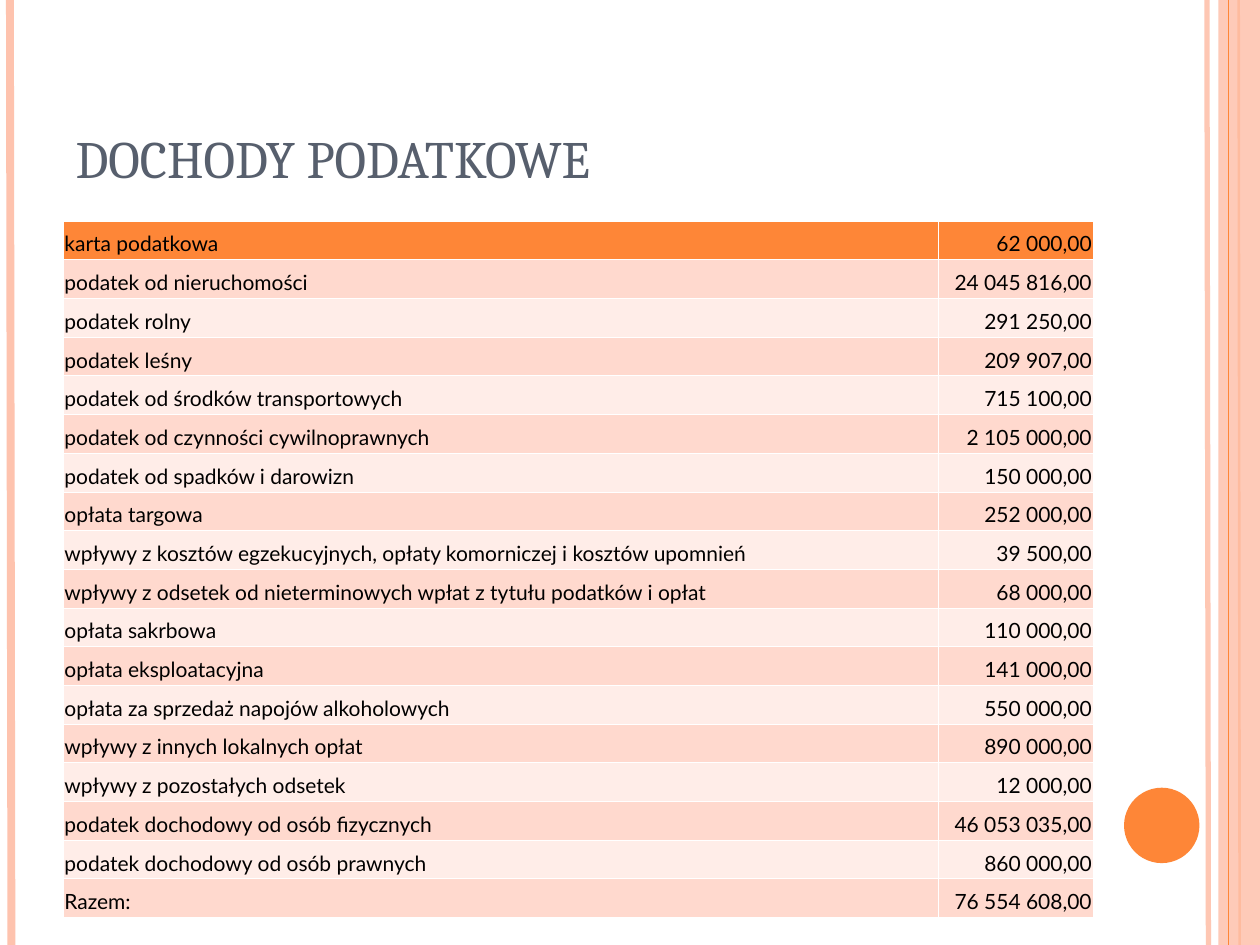
from lxml import etree
from pptx import Presentation
from pptx.dml.color import RGBColor
from pptx.enum import shapes, text
from pptx.oxml import ns
from pptx.util import Cm, Pt

ORANGE = RGBColor(0xFE, 0x86, 0x37)
PEACH = RGBColor(0xFE, 0xC3, 0xAE)
BAND_DARK = RGBColor(0xFF, 0xD9, 0xCE)
BAND_LIGHT = RGBColor(0xFF, 0xED, 0xE8)
SLATE = RGBColor(0x57, 0x5F, 0x6D)
BLACK = RGBColor(0, 0, 0)

SLIDE_WIDTH, SLIDE_HEIGHT = Cm(25.4), Cm(19.05)
COLUMN_WIDTHS = Cm(17.63), Cm(3.12)
ROW_HEIGHT = Cm(0.78)

REVENUES = [
    ("karta podatkowa", "62 000,00"),
    ("podatek od nieruchomości", "24 045 816,00"),
    ("podatek rolny", "291 250,00"),
    ("podatek leśny", "209 907,00"),
    ("podatek od środków transportowych", "715 100,00"),
    ("podatek od czynności cywilnoprawnych", "2 105 000,00"),
    ("podatek od spadków i darowizn", "150 000,00"),
    ("opłata targowa", "252 000,00"),
    ("wpływy z kosztów egzekucyjnych, opłaty komorniczej i kosztów upomnień", "39 500,00"),
    ("wpływy z odsetek od nieterminowych wpłat z tytułu podatków i opłat", "68 000,00"),
    ("opłata sakrbowa", "110 000,00"),
    ("opłata eksploatacyjna", "141 000,00"),
    ("opłata za sprzedaż napojów alkoholowych", "550 000,00"),
    ("wpływy z innych lokalnych opłat", "890 000,00"),
    ("wpływy z pozostałych odsetek", "12 000,00"),
    ("podatek dochodowy od osób fizycznych", "46 053 035,00"),
    ("podatek dochodowy od osób prawnych", "860 000,00"),
    ("Razem:", "76 554 608,00"),
]


def set_opacity(element, percent):
    """Set the opacity of the colour inside an element."""
    colour = element.find(".//" + ns.qn("a:srgbClr"))
    etree.SubElement(colour, ns.qn("a:alpha"), val=str(percent * 1000))


def style_text(frame, font_name, size, colour):
    """Format every run of a text frame."""
    for paragraph in frame.paragraphs:
        for run in paragraph.runs:
            run.font.name = font_name
            run.font.size = Pt(size)
            run.font.color.rgb = colour


def add_stripe(slide, top_x, bottom_x, colour, width, opacity=100):
    """Draw a line down the full height of the slide."""
    stripe = slide.shapes.add_connector(
        shapes.MSO_CONNECTOR.STRAIGHT, Cm(top_x), 0, Cm(bottom_x), SLIDE_HEIGHT)
    stripe.line.color.rgb = colour
    stripe.line.width = Pt(width)
    properties = stripe.element.spPr
    etree.SubElement(properties, ns.qn("a:effectLst"))
    if opacity < 100:
        set_opacity(properties, opacity)


def add_plain_shape(slide, preset, left, top, width, height, colour, opacity=100):
    """Add a filled shape without outline or shadow."""
    plain = slide.shapes.add_shape(preset, left, top, width, height)
    plain.shadow.inherit = False
    plain.fill.solid()
    plain.fill.fore_color.rgb = colour
    plain.line.fill.background()
    if opacity < 100:
        set_opacity(plain.element.spPr, opacity)


def add_decoration(slide):
    """Draw the side stripes and the round marker."""
    add_stripe(slide, 24.33, 24.36, PEACH, 3, 93)
    add_stripe(slide, 0.2, 0.23, PEACH, 4.5)
    add_stripe(slide, 24.97, 24.99, ORANGE, 1.5)
    add_plain_shape(slide, shapes.MSO_SHAPE.RECTANGLE,
                    Cm(24.56), 0, Cm(0.84), SLIDE_HEIGHT, PEACH, 87)
    add_stripe(slide, 24.77, 24.77, ORANGE, 0.75)
    add_plain_shape(slide, shapes.MSO_SHAPE.OVAL,
                    Cm(22.66), Cm(15.88), Cm(1.52), Cm(1.52), ORANGE)


def set_title(slide, wording):
    """Place, fill and format the title."""
    title = slide.shapes.title
    title.left, title.top = Cm(1.27), Cm(0.76)
    title.width, title.height = Cm(20.75), Cm(3.18)
    frame = title.text_frame
    frame.text = wording
    frame.word_wrap = True
    frame.vertical_anchor = text.MSO_ANCHOR.BOTTOM
    frame.paragraphs[0].alignment = text.PP_ALIGN.LEFT
    style_text(frame, "Cambria", 30, SLATE)


def add_borders(cell):
    """Give a cell hairline white borders, placed ahead of its fill."""
    properties = cell._tc.get_or_add_tcPr()
    for position, side in enumerate(("lnL", "lnR", "lnT", "lnB")):
        border = etree.Element(ns.qn(f"a:{side}"), w=str(Pt(0.06)))
        fill = etree.SubElement(border, ns.qn("a:solidFill"))
        etree.SubElement(fill, ns.qn("a:srgbClr"), val="FFFFFF")
        properties.insert(position, border)


def fill_cell(cell, wording, alignment, colour):
    """Write and format one table cell."""
    cell.margin_left = cell.margin_right = cell.margin_top = Cm(0.02)
    cell.margin_bottom = 0
    cell.vertical_anchor = text.MSO_ANCHOR.MIDDLE
    cell.fill.solid()
    cell.fill.fore_color.rgb = colour
    add_borders(cell)
    cell.text_frame.text = wording
    paragraph = cell.text_frame.paragraphs[0]
    paragraph.alignment = alignment
    paragraph.line_spacing = 1.25
    style_text(cell.text_frame, "Lato", 12, BLACK)


def add_revenue_table(slide):
    """Add the table of tax revenues with alternating bands."""
    table = slide.shapes.add_table(
        len(REVENUES), 2, Cm(1.28), Cm(4.45),
        sum(COLUMN_WIDTHS), ROW_HEIGHT * len(REVENUES)).table
    for column, width in zip(table.columns, COLUMN_WIDTHS):
        column.width = width
    alignments = text.PP_ALIGN.LEFT, text.PP_ALIGN.RIGHT
    for index, (row, revenue) in enumerate(zip(table.rows, REVENUES)):
        row.height = ROW_HEIGHT
        band = BAND_DARK if index % 2 else BAND_LIGHT
        colour = band if index else ORANGE
        for cell, wording, alignment in zip(row.cells, revenue, alignments):
            fill_cell(cell, wording, alignment, colour)


def main():
    """Build the slide and save it."""
    presentation = Presentation()
    presentation.slide_width, presentation.slide_height = SLIDE_WIDTH, SLIDE_HEIGHT
    slide = presentation.slides.add_slide(presentation.slide_layouts[5])
    add_decoration(slide)
    set_title(slide, "DOCHODY PODATKOWE")
    add_revenue_table(slide)
    presentation.save("out.pptx")


if __name__ == "__main__":
    main()
